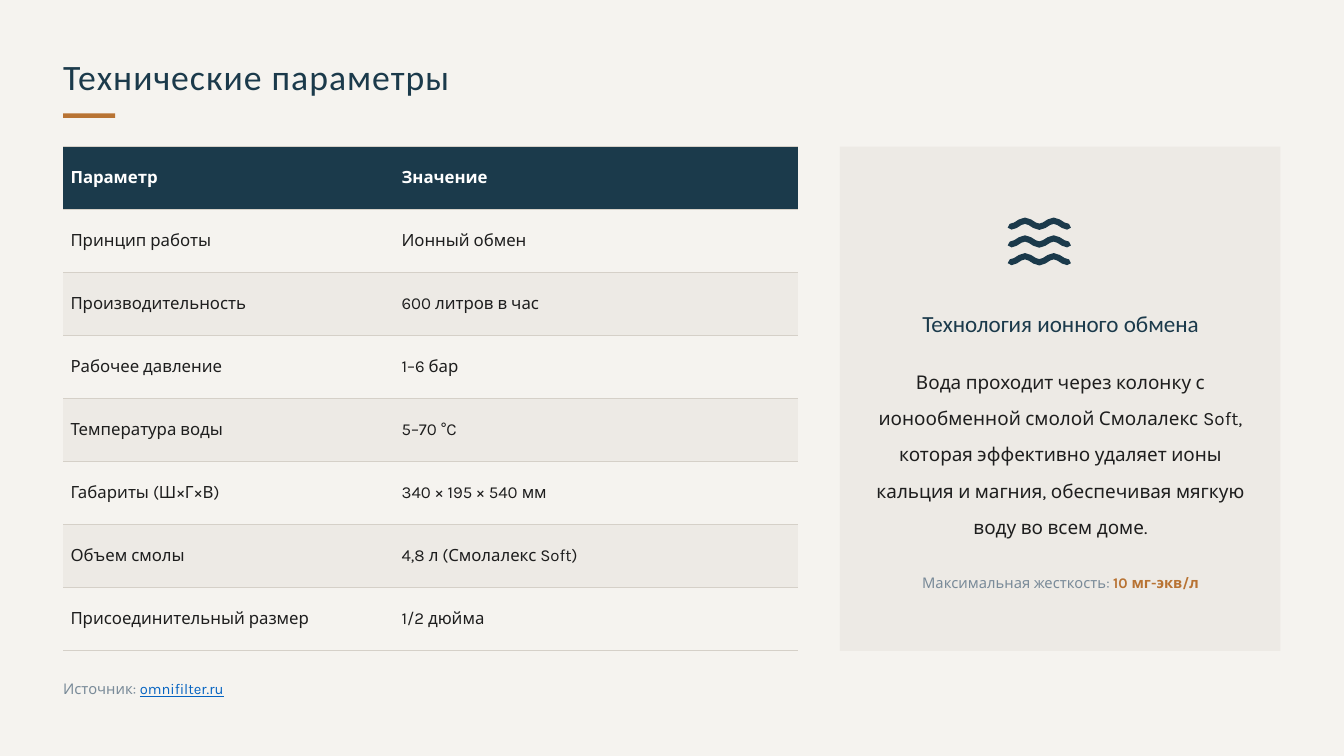
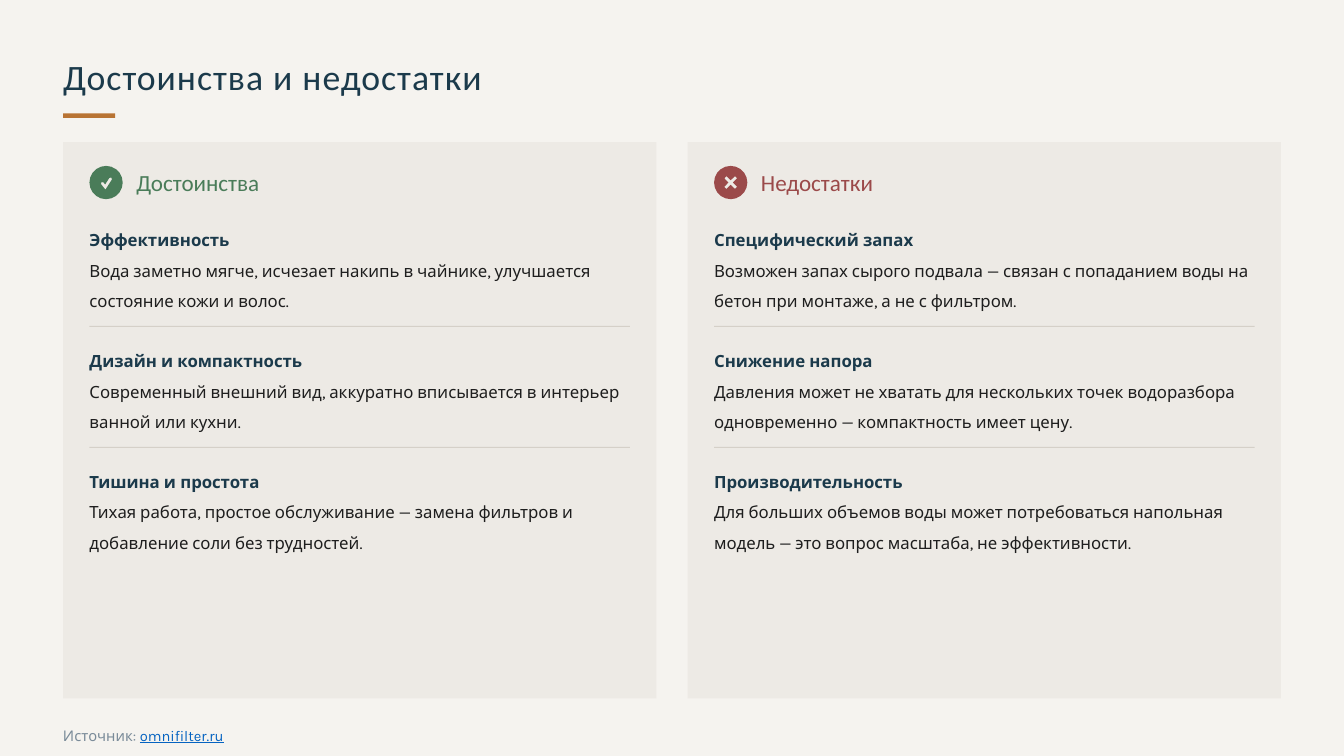
"""Build two slides about a water softener: parameters, then pros and cons."""
from math import atan2, cos, hypot, pi, sin

from lxml.etree import SubElement
from pptx import Presentation
from pptx.dml.color import RGBColor
from pptx.enum.shapes import MSO_SHAPE as Shape
from pptx.enum.text import MSO_ANCHOR as Anchor, MSO_AUTO_SIZE as AutoSize, PP_ALIGN as Align
from pptx.oxml.ns import qn
from pptx.util import Inches, Pt

PAPER = RGBColor(0xF5, 0xF3, 0xEF)
PANEL = RGBColor(0xED, 0xEA, 0xE5)
RULE = RGBColor(0xD5, 0xD0, 0xC8)
NAVY = RGBColor(0x1B, 0x3A, 0x4B)
COPPER = RGBColor(0xB8, 0x73, 0x33)
INK = RGBColor(0x1E, 0x1E, 0x1E)
GREY = RGBColor(0x7A, 0x8B, 0x99)
LINK_BLUE = RGBColor(0x05, 0x63, 0xC1)
GREEN = RGBColor(0x4A, 0x7C, 0x59)
RED = RGBColor(0x9B, 0x4A, 0x4A)
WHITE = RGBColor(0xFF, 0xFF, 0xFF)

SLIDE_WIDTH = 17.78
MARGIN = 5 / 6
CARD_WIDTH = 7.85
RULE_HEIGHT = 1 / 72
PLAIN_TABLE_STYLE = "{2D5ABB26-0587-4C30-8999-92F81FD0307C}"


def text_style(size, color, name="Karla", **extra):
    """Return the font values of a run."""
    return {"name": name, "size": Pt(size), "color": color, **extra}


TITLE = text_style(34, NAVY, "Calibri", bold=False)
BODY = text_style(16, INK, bold=False)
BODY_LARGE = text_style(18, INK)
TABLE_HEAD = text_style(16, WHITE, bold=True)
ITEM_HEAD = text_style(16, NAVY, bold=True)
NOTE = text_style(14, GREY)
NOTE_VALUE = text_style(14, COPPER, bold=True)
NOTE_LINK = text_style(14, LINK_BLUE, underline=True)

PARAMETERS = [
    ("Параметр", "Значение"),
    ("Принцип работы", "Ионный обмен"),
    ("Производительность", "600 литров в час"),
    ("Рабочее давление", "1–6 бар"),
    ("Температура воды", "5–70 °C"),
    ("Габариты (Ш×Г×В)", "340 × 195 × 540 мм"),
    ("Объем смолы", "4,8 л (Смолалекс Soft)"),
    ("Присоединительный размер", "1/2 дюйма"),
]
TECHNOLOGY = (
    "Вода проходит через колонку с ионообменной смолой Смолалекс Soft, которая эффективно "
    "удаляет ионы кальция и магния, обеспечивая мягкую воду во всем доме."
)
PROS = [
    ("Эффективность",
     "Вода заметно мягче, исчезает накипь в чайнике, улучшается состояние кожи и волос."),
    ("Дизайн и компактность",
     "Современный внешний вид, аккуратно вписывается в интерьер ванной или кухни."),
    ("Тишина и простота",
     "Тихая работа, простое обслуживание — замена фильтров и добавление соли без трудностей."),
]
CONS = [
    ("Специфический запах",
     "Возможен запах сырого подвала — связан с попаданием воды на бетон при монтаже, "
     "а не с фильтром."),
    ("Снижение напора",
     "Давления может не хватать для нескольких точек водоразбора одновременно — "
     "компактность имеет цену."),
    ("Производительность",
     "Для больших объемов воды может потребоваться напольная модель — это вопрос масштаба, "
     "не эффективности."),
]


def add_run(paragraph, text, style):
    """Append a run and apply its font values."""
    run = paragraph.add_run()
    run.text = text
    for key, value in style.items():
        if key == "color":
            run.font.color.rgb = value
        else:
            setattr(run.font, key, value)
    return run


def set_frame(frame, anchor, wrap):
    """Remove the insets of a text frame and set its anchor and wrapping."""
    values = {
        "margin_left": 0, "margin_right": 0, "margin_top": 0, "margin_bottom": 0,
        "auto_size": AutoSize.NONE, "vertical_anchor": anchor, "word_wrap": wrap,
    }
    for key, value in values.items():
        setattr(frame, key, value)


def add_text(slide, box, paragraphs, anchor=Anchor.MIDDLE, wrap=True, align=Align.LEFT, spacing=1.0):
    """Add a text box; each paragraph is a list of (text, style) runs."""
    frame = slide.shapes.add_textbox(*map(Inches, box)).text_frame
    set_frame(frame, anchor, wrap)
    for index, runs in enumerate(paragraphs):
        paragraph = frame.add_paragraph() if index else frame.paragraphs[0]
        paragraph.alignment = align
        paragraph.line_spacing = spacing
        for text, style in runs:
            add_run(paragraph, text, style)


def paint(shape, color):
    """Give a shape a flat fill without line or shadow."""
    shape.shadow.inherit = False
    shape.fill.solid()
    shape.fill.fore_color.rgb = color
    shape.line.fill.background()


def add_rectangle(slide, box, color):
    """Add a flat rectangle."""
    paint(slide.shapes.add_shape(Shape.RECTANGLE, *map(Inches, box)), color)


def arc(center, radius, start, sweep, steps=2):
    """Return points along a circular arc."""
    angles = [start + sweep * step / steps for step in range(steps + 1)]
    return [(center[0] + radius * cos(angle), center[1] + radius * sin(angle)) for angle in angles]


def ribbon(points, radius):
    """Return the outline of a thick polyline with rounded ends."""
    headings = [atan2(y2 - y1, x2 - x1) for (x1, y1), (x2, y2) in zip(points, points[1:])]
    left, right = [], []
    for (x, y), before, after in zip(points[1:], headings, headings[1:]):
        normal_x, normal_y = -sin(before) - sin(after), cos(before) + cos(after)
        scale = 2 * radius / hypot(normal_x, normal_y) ** 2
        left.append((x + normal_x * scale, y + normal_y * scale))
        right.append((x - normal_x * scale, y - normal_y * scale))
    end_cap = arc(points[-1], radius, headings[-1] + pi / 2, -pi)
    start_cap = arc(points[0], radius, headings[0] - pi / 2, -pi)
    return left + end_cap + right[::-1] + start_cap


def add_outline(slide, contours, color):
    """Add one freeform made of closed contours."""
    contours = [[(Inches(x), Inches(y)) for x, y in contour] for contour in contours]
    builder = slide.shapes.build_freeform(*contours[0][0], scale=1.0)
    for index, contour in enumerate(contours):
        if index:
            builder.move_to(*contour[0])
        builder.add_line_segments(contour[1:], close=True)
    paint(builder.convert_to_shape(), color)


def add_waves(slide, left, top, color):
    """Draw three waves of two periods each."""
    waves = []
    for row in range(3):
        middle = top + 0.235 * row
        points = [(left + 0.76 * step / 12, middle + 0.04 * cos(pi * step / 3))
                  for step in range(13)]
        waves.append(ribbon(points, 0.04))
    add_outline(slide, waves, color)


def check_mark(x, y):
    """Return the outline of a check mark around a centre."""
    return ribbon([(x - 0.05, y + 0.01), (x - 0.01, y + 0.06), (x + 0.06, y - 0.05)], 0.02)


def cross_mark(x, y):
    """Return the outline of a diagonal cross around a centre."""
    outline = []
    for arm in range(4):
        angle = pi / 4 + arm * pi / 2
        tip = (x + 0.1 * cos(angle), y + 0.1 * sin(angle))
        outline += arc(tip, 0.02, angle - pi / 2, pi, 1)
        corner = angle + pi / 4
        outline.append((x + 0.03 * cos(corner), y + 0.03 * sin(corner)))
    return outline


def add_titled_slide(presentation, title):
    """Add a slide with the shared title style and accent bar."""
    slide = presentation.slides.add_slide(presentation.slide_layouts[5])
    shape = slide.shapes.title
    box = {"left": MARGIN, "top": 0.69, "width": 8.33, "height": 0.64}
    for key, value in box.items():
        setattr(shape, key, Inches(value))
    set_frame(shape.text_frame, Anchor.MIDDLE, False)
    paragraph = shape.text_frame.paragraphs[0]
    paragraph.alignment = Align.LEFT
    run = add_run(paragraph, title, TITLE)
    run.font._element.set("spc", "100")
    add_rectangle(slide, (MARGIN, 1.5, 0.69, 0.06), COPPER)
    return slide


def add_source(slide, top, width):
    """Add the source line."""
    runs = [("Источник: ", NOTE), ("omnifilter.ru", NOTE_LINK)]
    add_text(slide, (MARGIN, top, width, 0.33), [runs], spacing=1.4)


def add_cell_borders(cell):
    """Draw the top and bottom borders of a cell."""
    properties = cell._tc.get_or_add_tcPr()
    for tag in ("a:lnT", "a:lnB"):
        line = SubElement(properties, qn(tag), w=str(Pt(1)))
        fill = SubElement(line, qn("a:solidFill"))
        SubElement(fill, qn("a:srgbClr"), val=str(RULE))


def add_parameter_table(slide, rows, box, widths):
    """Add the striped table of parameters."""
    table = slide.shapes.add_table(len(rows), len(widths), *map(Inches, box)).table
    table._tbl.tblPr.find(qn("a:tableStyleId")).text = PLAIN_TABLE_STYLE
    table.first_row = table.horz_banding = False
    for column, width in zip(table.columns, widths):
        column.width = Inches(width)
    for row_index, values in enumerate(rows):
        table.rows[row_index].height = Inches(box[3] / len(rows))
        stripe = PAPER if row_index % 2 else PANEL
        for column_index, text in enumerate(values):
            cell = table.cell(row_index, column_index)
            add_cell_borders(cell)
            cell.fill.solid()
            cell.fill.fore_color.rgb = stripe if row_index else NAVY
            cell.margin_top = cell.margin_bottom = 0
            cell.vertical_anchor = Anchor.MIDDLE
            add_run(cell.text_frame.paragraphs[0], text, BODY if row_index else TABLE_HEAD)


def add_technology_panel(slide):
    """Add the panel that explains ion exchange."""
    add_rectangle(slide, (11.11, 1.94, 5.83, 6.67), PANEL)
    add_waves(slide, 13.37, 2.96, NAVY)
    heading = text_style(22, NAVY, "Calibri")
    add_text(slide, (11.53, 4.03, 5, 0.5), [[("Технология ионного обмена", heading)]],
             wrap=False, align=Align.CENTER)
    add_text(slide, (11.53, 4.72, 5, 2.5), [[(TECHNOLOGY, BODY_LARGE)]],
             anchor=Anchor.TOP, align=Align.CENTER, spacing=1.6)
    hardness = [("Максимальная жесткость: ", NOTE), ("10 мг-экв/л", NOTE_VALUE)]
    add_text(slide, (11.53, 7.5, 5, 0.42), [hardness], align=Align.CENTER)


def add_opinion_card(slide, left, heading, color, mark, items):
    """Add a card with a round icon, a heading and ruled items."""
    add_rectangle(slide, (left, 1.88, CARD_WIDTH, 7.36), PANEL)
    inner = left + 0.35
    center = (inner + 0.22, 2.415)
    add_outline(slide, [arc(center, 0.22, 0, 2 * pi, 20)[:-1], mark(*center)], color)
    add_text(slide, (inner + 0.62, 2.19, 2.78, 0.44),
             [[(heading, text_style(22, color, "Calibri"))]], wrap=False)
    for index, (name, description) in enumerate(items):
        top = 2.91 + 1.6 * index
        if index:
            add_rectangle(slide, (inner, top - 0.2, 7.15, RULE_HEIGHT), RULE)
        add_text(slide, (inner, top, 7.15, 1.25), [[(name, ITEM_HEAD)], [(description, BODY)]],
                 anchor=Anchor.TOP, spacing=1.5)


def main():
    """Build and save the presentation."""
    presentation = Presentation()
    presentation.slide_width = Inches(SLIDE_WIDTH)
    presentation.slide_height = Inches(10)
    background = presentation.slide_master.background.fill
    background.solid()
    background.fore_color.rgb = PAPER

    slide = add_titled_slide(presentation, "Технические параметры")
    add_parameter_table(slide, PARAMETERS, (MARGIN, 1.94, 9.72, 6.67), (4.38, 5.35))
    add_technology_panel(slide)
    add_source(slide, 8.9, 9.72)

    slide = add_titled_slide(presentation, "Достоинства и недостатки")
    add_opinion_card(slide, MARGIN, "Достоинства", GREEN, check_mark, PROS)
    right_card = SLIDE_WIDTH - MARGIN - CARD_WIDTH
    add_opinion_card(slide, right_card, "Недостатки", RED, cross_mark, CONS)
    add_source(slide, 9.52, 8.33)

    presentation.save("out.pptx")


if __name__ == "__main__":
    main()
